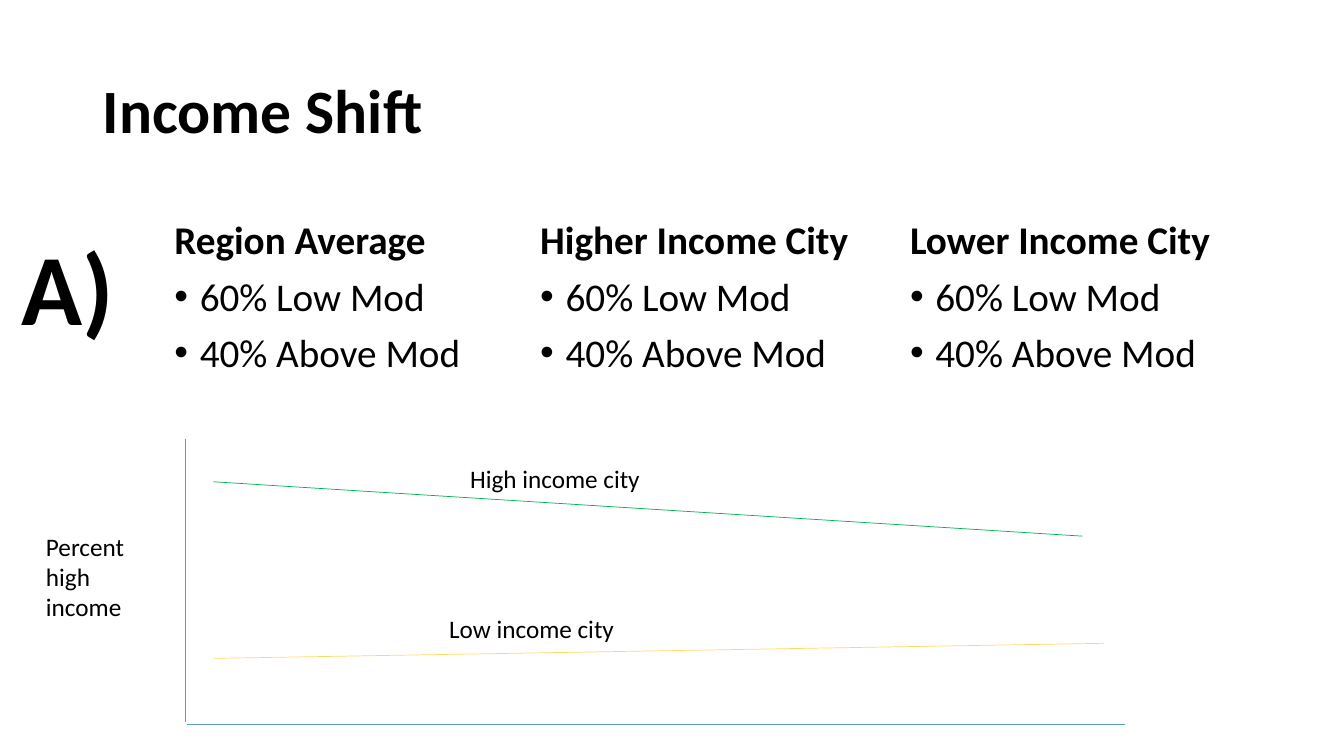
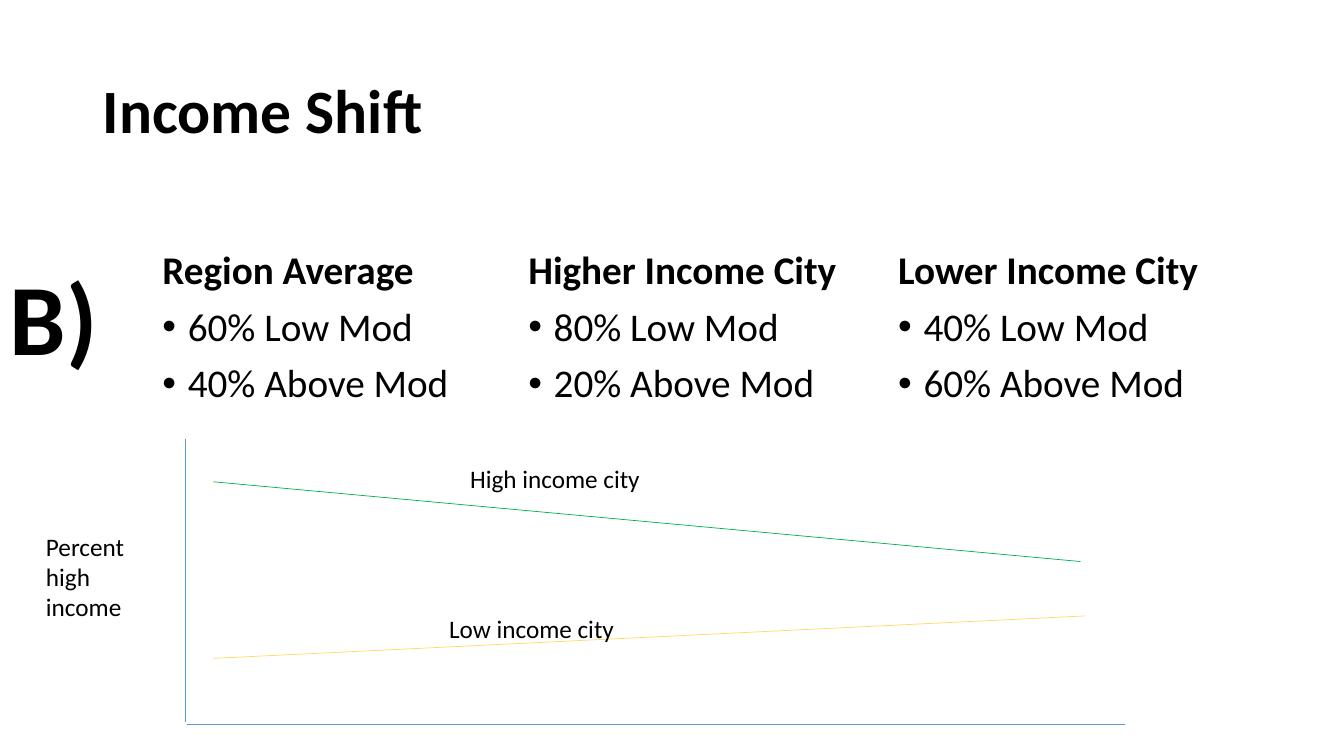
"""Build two slides that compare income shift scenarios."""
from dataclasses import dataclass

from lxml import etree
from pptx import Presentation
from pptx.dml.color import RGBColor
from pptx.enum.shapes import MSO_CONNECTOR
from pptx.enum.text import MSO_ANCHOR, MSO_AUTO_SIZE, PP_ALIGN
from pptx.oxml.ns import qn
from pptx.util import Cm, Pt

STRAIGHT = MSO_CONNECTOR.STRAIGHT
TOP, MIDDLE = MSO_ANCHOR.TOP, MSO_ANCHOR.MIDDLE
NO_FIT = MSO_AUTO_SIZE.NONE
LEFT = PP_ALIGN.LEFT
COMPARISON_LAYOUT = 4


@dataclass(frozen=True)
class Theme:
    """Colours, font and type sizes of the deck."""

    font: str = "Calibri"
    ink: RGBColor = RGBColor(0x00, 0x00, 0x00)
    axis: RGBColor = RGBColor(0x5B, 0x9B, 0xD5)
    high: RGBColor = RGBColor(0x00, 0xB0, 0x50)
    low: RGBColor = RGBColor(0xFF, 0xD9, 0x66)
    title: int = 44
    letter: int = 72
    body: int = 28
    label: int = 18
    hairline: float = 0.5


@dataclass(frozen=True)
class Box:
    """A rectangle in centimetres."""

    left: float
    top: float
    width: float
    height: float

    def inside(self, left, top, width, height):
        """Return a box offset from the corner of this one."""
        return Box(self.left + left, self.top + top, width, height)

    def point(self, across, down):
        """Return a point offset from the corner of this box."""
        return Cm(self.left + across), Cm(self.top + down)


THEME = Theme()
TITLE_BOX = Box(2.34, 1.02, 29.21, 3.68)
PLOT_BOX = Box(4.67, 11.05, 23.67, 7.21)
COLUMN_HEIGHT = 5.33
COLUMNS = (
    ("Region Average", 3.84, 8.31),
    ("Higher Income City", 13.06, 9.73),
    ("Lower Income City", 22.38, 10.31),
)
SCENARIOS = (
    {
        "letter": "A)",
        "box": Box(0.3, 5.54, 32.69, 5.23),
        "low_mod": (60, 60, 60),
        "high_end": (22.61, 2.46),
        "low_end": (23.16, 5.16),
    },
    {
        "letter": "B)",
        "box": Box(0, 6.3, 32.69, 5.23),
        "low_mod": (60, 80, 40),
        "high_end": (22.56, 3.1),
        "low_end": (22.68, 4.47),
    },
)


def set_values(target, values):
    """Set each named attribute of the target."""
    for name, value in values.items():
        setattr(target, name, value)


def place(shape, box):
    """Move and size a shape to fit the box."""
    set_values(shape, {
        "left": Cm(box.left),
        "top": Cm(box.top),
        "width": Cm(box.width),
        "height": Cm(box.height),
    })


def prepare_frame(shape, anchor):
    """Return the wrapped, unscaled text frame of a shape."""
    frame = shape.text_frame
    set_values(frame, {
        "word_wrap": True, "auto_size": NO_FIT, "vertical_anchor": anchor,
    })
    return frame


def write(para, text, size, bold=False, line_spacing=1.0, space_before=0):
    """Put one formatted span into a paragraph."""
    set_values(para, {
        "alignment": LEFT,
        "line_spacing": line_spacing,
        "space_before": Pt(space_before),
        "space_after": Pt(0),
    })
    span = para.add_run()
    span.text = text
    set_values(span.font, {"name": THEME.font, "size": Pt(size), "bold": bold})
    span.font.color.rgb = THEME.ink


def set_bullet(para, symbol=None):
    """Give a paragraph a hanging bullet, or clear it."""
    indent = Cm(0.64) if symbol else 0
    properties = para._p.get_or_add_pPr()
    properties.set("marL", str(indent))
    properties.set("indent", str(-indent))
    if symbol:
        etree.SubElement(properties, qn("a:buFont")).set("typeface", "Arial")
        etree.SubElement(properties, qn("a:buChar")).set("char", symbol)
    else:
        etree.SubElement(properties, qn("a:buNone"))


def add_text(page, box, text, size, bold=False):
    """Add a plain text box."""
    shape = page.shapes.add_textbox(0, 0, 0, 0)
    place(shape, box)
    write(prepare_frame(shape, TOP).paragraphs[0], text, size, bold)


def add_line(page, start, end, color):
    """Add a thin straight line between two points."""
    connector = page.shapes.add_connector(STRAIGHT, *start, *end)
    connector.line.color.rgb = color
    connector.line.width = Pt(THEME.hairline)
    etree.SubElement(connector._element.spPr, qn("a:effectLst"))


def fill_title(page, box):
    """Fill the title placeholder."""
    shape = page.shapes.title
    place(shape, box)
    para = prepare_frame(shape, MIDDLE).paragraphs[0]
    write(para, "Income Shift", THEME.title, bold=True, line_spacing=0.9)


def fill_column(shape, box, heading, low_mod):
    """Fill a body placeholder with a heading and two shares."""
    place(shape, box)
    frame = prepare_frame(shape, TOP)
    lines = (
        (heading, True),
        (f"{low_mod}% Low Mod", False),
        (f"{100 - low_mod}% Above Mod", False),
    )
    for number, (text, is_heading) in enumerate(lines):
        para = frame.add_paragraph() if number else frame.paragraphs[0]
        write(para, text, THEME.body, is_heading, 0.9, 10)
        set_bullet(para, None if is_heading else "•")


def fill_shares(page, box, letter, shares):
    """Place the scenario letter and its three columns."""
    add_text(page, box.inside(0, 0, 3, 3.33), letter, THEME.letter, bold=True)
    bodies = [shape for shape in page.placeholders
              if shape.placeholder_format.idx > 0]
    for shape, (heading, left, width), low_mod in zip(bodies, COLUMNS, shares):
        column = box.inside(left, -0.1, width, COLUMN_HEIGHT)
        fill_column(shape, column, heading, low_mod)
    for spare in bodies[len(COLUMNS):]:
        spare._element.getparent().remove(spare._element)


def draw_plot(page, box, high_end, low_end):
    """Sketch the trend lines of both cities between two axes."""
    lines = (
        ((0, 0), (0, box.height - 0.07), THEME.axis),
        ((0.05, box.height), (box.width, box.height), THEME.axis),
        ((0.71, 1.09), high_end, THEME.high),
        ((0.71, 5.54), low_end, THEME.low),
    )
    for start, end, color in lines:
        add_line(page, box.point(*start), box.point(*end), color)
    labels = (
        ("Percent high income", (-3.76, 2.21, 2.84, 2.57)),
        ("High income city", (6.93, 0.51, 8.08, 1.02)),
        ("Low income city", (6.4, 4.29, 8.08, 1.02)),
    )
    for text, area in labels:
        add_text(page, box.inside(*area), text, THEME.label)


def add_scenario(deck, scenario):
    """Add the slide of one scenario."""
    page = deck.slides.add_slide(deck.slide_layouts[COMPARISON_LAYOUT])
    fill_title(page, TITLE_BOX)
    fill_shares(page, scenario["box"], scenario["letter"], scenario["low_mod"])
    draw_plot(page, PLOT_BOX, scenario["high_end"], scenario["low_end"])


def main():
    """Build and save the deck."""
    deck = Presentation()
    set_values(deck, {"slide_width": Cm(33.87), "slide_height": Cm(19.05)})
    for scenario in SCENARIOS:
        add_scenario(deck, scenario)
    deck.save("out.pptx")


if __name__ == "__main__":
    main()
